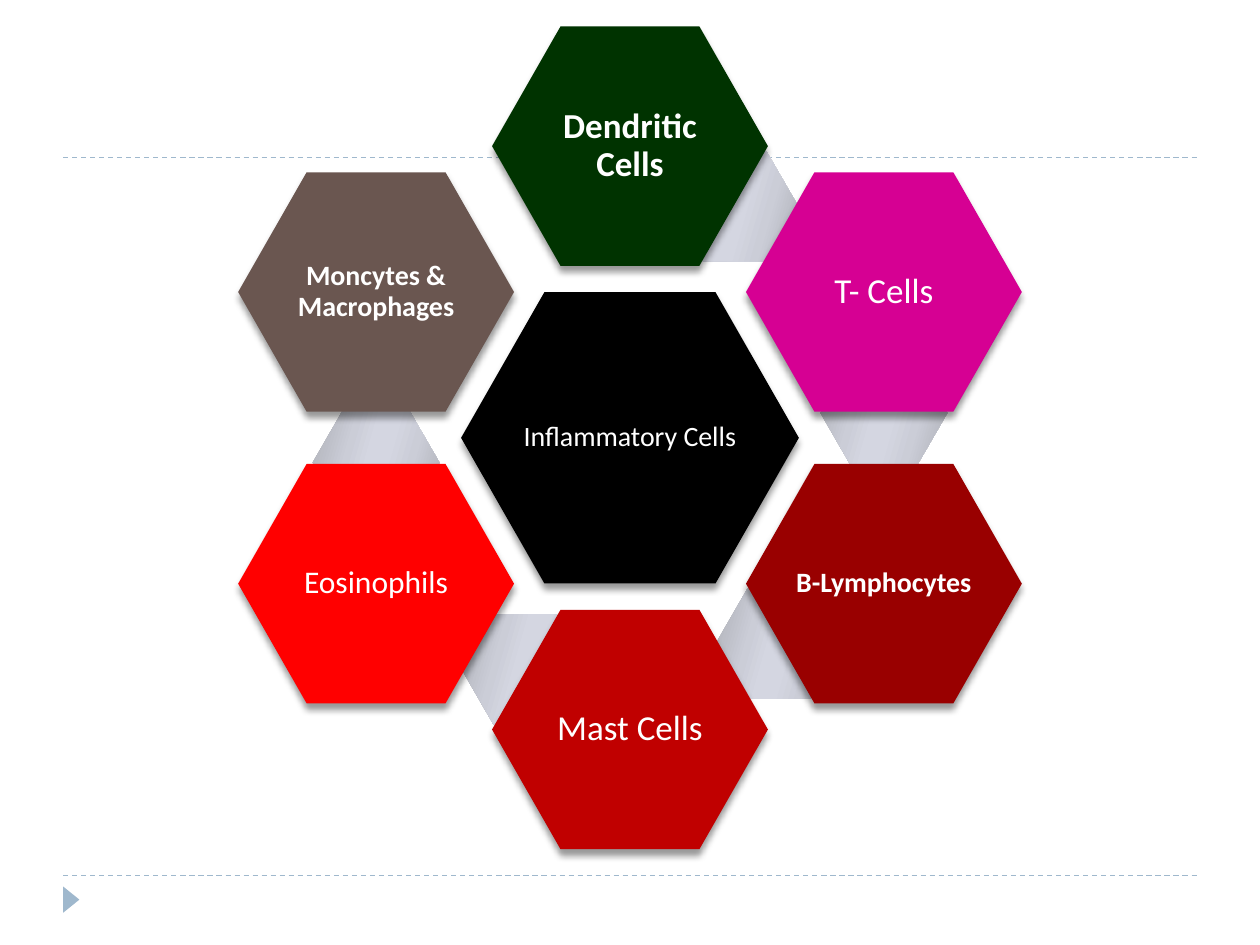
from dataclasses import dataclass
from math import hypot

from lxml.etree import SubElement
from pptx import Presentation
from pptx.dml.color import RGBColor
from pptx.enum.dml import MSO_LINE
from pptx.enum.shapes import MSO_CONNECTOR, MSO_SHAPE
from pptx.enum.text import MSO_ANCHOR, PP_ALIGN
from pptx.oxml.ns import qn
from pptx.util import Inches, Pt


@dataclass(frozen=True)
class Theme:
    font: str = "Calibri"
    text: str = "FFFFFF"
    accent: str = "9FB8CD"
    hub: str = "000000"
    shadow: str = "000000"
    link: tuple = ((0, "AEB0B7"), (30, "CBCDD7"), (45, "D4D6E1"),
                   (55, "D4D6E1"), (73, "CBCDD7"), (100, "AEB0B7"))
    large: int = 20
    medium: int = 18
    small: int = 16


THEME = Theme()
WIDTH, HEIGHT = 10, 7.5

# Clockwise from the top: label, fill, type size, bold
CELLS = (
    ("Dendritic Cells", "003300", THEME.large, True),
    ("T- Cells", "D60093", THEME.large, False),
    ("B-Lymphocytes", "990000", THEME.small, True),
    ("Mast Cells", "C00000", THEME.large, False),
    ("Eosinophils", "FF0000", THEME.medium, False),
    ("Moncytes & Macrophages", "6A5650", THEME.small, True),
)
# Ring places as shares of the half width and half height between centres
RING = ((0, -1), (1, -0.5), (1, 0.5), (0, 1), (-1, 0.5), (-1, -0.5))


def rgb(value):
    return RGBColor.from_string(value)


def add_plain(s, kind, cx, cy, w, h):
    """Add a shape without line or shadow, centred on (cx, cy) in inches."""
    sp = s.shapes.add_shape(kind, Inches(cx - w / 2), Inches(cy - h / 2),
                            Inches(w), Inches(h))
    sp.shadow.inherit = False
    sp.line.fill.background()
    return sp


def add_shadow(sp):
    effects = sp.element.spPr.find(qn("a:effectLst"))
    shadow = SubElement(effects, qn("a:outerShdw"), blurRad=str(Pt(4)),
                        dist=str(Pt(3.4)), dir="5400000", rotWithShape="0")
    color = SubElement(shadow, qn("a:srgbClr"), val=THEME.shadow)
    SubElement(color, qn("a:alpha"), val="40000")


def add_cell(s, cx, cy, w, h, label, fill, size, bold=False):
    sp = add_plain(s, MSO_SHAPE.HEXAGON, cx, cy, w, h)
    sp.adjustments[0] = 0.286
    sp.fill.solid()
    sp.fill.fore_color.rgb = rgb(fill)
    add_shadow(sp)
    tf = sp.text_frame
    tf.text = label
    tf.word_wrap = True
    tf.vertical_anchor = MSO_ANCHOR.MIDDLE
    tf.margin_left = tf.margin_right = Inches(0.02)
    tf.margin_top = tf.margin_bottom = Inches(0.02)
    p = tf.paragraphs[0]
    p.alignment = PP_ALIGN.CENTER
    p.line_spacing = 0.9
    font = p.runs[0].font
    font.name, font.size, font.bold = THEME.font, Pt(size), bold
    font.color.rgb = rgb(THEME.text)


def add_link(s, cx, cy, w, h):
    """Add a pale gradient hexagon that peeks out between two cells."""
    sp = add_plain(s, MSO_SHAPE.HEXAGON, cx, cy, w, h)
    sp.adjustments[0] = 0.289
    sp.fill.gradient()
    grad = sp.element.spPr.find(qn("a:gradFill"))
    stops = grad.find(qn("a:gsLst"))
    for stop in list(stops):
        stops.remove(stop)
    for pos, color in THEME.link:
        stop = SubElement(stops, qn("a:gs"), pos=str(pos * 1000))
        SubElement(stop, qn("a:srgbClr"), val=color)
    grad.find(qn("a:lin")).set("ang", str(16 * 60000))


def add_cell_ring(s, left, top, w, h):
    """Place the hub, six cells around it and the links inside the box."""
    cell_w, cell_h = w * 0.352, h * 0.291
    cx, cy = left + w / 2, top + h / 2
    reach_x, reach_y = (w - cell_w) / 2, (h - cell_h) / 2
    centres = [(cx + x * reach_x, cy + y * reach_y) for x, y in RING]

    add_cell(s, cx, cy, w * 0.431, h * 0.354, "Inflammatory Cells",
             THEME.hub, THEME.small)
    for i, cell in enumerate(CELLS):
        x, y = centres[i]
        if i < len(CELLS) - 1:
            dx, dy = centres[i + 1][0] - x, centres[i + 1][1] - y
            share = 0.96 / hypot(dx, dy)
            add_link(s, x + dx * share, y + dy * share,
                     cell_w * 0.46, cell_h * 0.46)
        add_cell(s, x, y, cell_w, cell_h, *cell)


def add_rule(s, left, right, y):
    line = s.shapes.add_connector(MSO_CONNECTOR.STRAIGHT, Inches(left),
                                  Inches(y), Inches(right), Inches(y))
    line.line.color.rgb = rgb(THEME.accent)
    line.line.width = Pt(0.75)
    line.line.dash_style = MSO_LINE.DASH
    SubElement(line.element.spPr, qn("a:effectLst"))


def add_frame(s, left, top, w, h):
    """Add the dashed rules and the marker below the lower one."""
    for y in (top + h, top):
        add_rule(s, left, left + w, y)
    marker = add_plain(s, MSO_SHAPE.ISOSCELES_TRIANGLE,
                       left + 0.065, top + h + 0.19, 0.21, 0.13)
    marker.rotation = 90
    marker.fill.solid()
    marker.fill.fore_color.rgb = rgb(THEME.accent)


def main():
    prs = Presentation()
    prs.slide_width, prs.slide_height = Inches(WIDTH), Inches(HEIGHT)
    s = prs.slides.add_slide(prs.slide_layouts[6])
    add_frame(s, WIDTH * 0.05, 1.25, WIDTH * 0.9, 5.7)
    add_cell_ring(s, 1.89, 0.21, 6.22, 6.53)
    prs.save("out.pptx")


if __name__ == "__main__":
    main()
